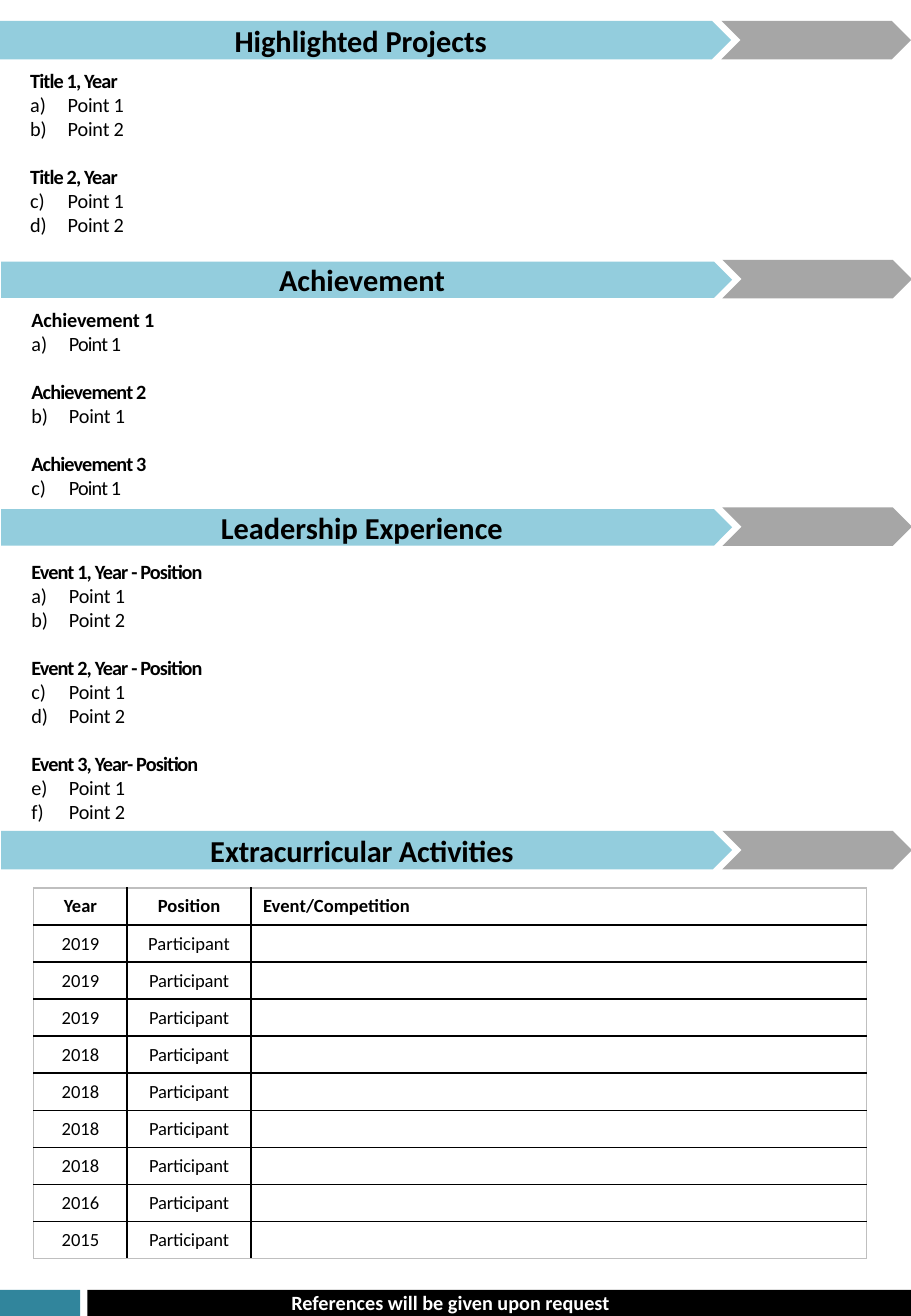
from lxml.etree import SubElement
from pptx import Presentation
from pptx.dml.color import RGBColor
from pptx.enum.shapes import MSO_SHAPE
from pptx.enum.text import MSO_ANCHOR, PP_ALIGN
from pptx.oxml.ns import qn
from pptx.util import Pt

BLACK = RGBColor(0x00, 0x00, 0x00)
WHITE = RGBColor(0xFF, 0xFF, 0xFF)
SKY = RGBColor(0x93, 0xCD, 0xDD)
TEAL = RGBColor(0x31, 0x85, 0x9C)
GREY = RGBColor(0xA6, 0xA6, 0xA6)
FRAME = RGBColor(0xBF, 0xBF, 0xBF)

TIGHT, SLIGHT, NORMAL, LOOSE = -50, -10, 0, 10
LINE = Pt(14.2)
TWO_POINTS = ["Point 1", "Point 2"]

BANNERS = [
    ([("Highlighted Projects", NORMAL)], 0, 12.4, 22.8, 12.4),
    ([("Achievement", NORMAL)], 0.6, 155, 21.6, 154),
    ([("Leadership Experience", NORMAL)], 0.6, 301.7, 21.6, 300.7),
    ([("E", LOOSE), ("xtracurricular Activities", SLIGHT)], 0.6, 492.3, 22.8, 492.3),
]
PROJECTS = [(f"Title {number}, Year", TIGHT, TWO_POINTS, SLIGHT) for number in (1, 2)]
ACHIEVEMENTS = [
    ("Achievement 1", SLIGHT, ["Point 1"], TIGHT),
    ("Achievement 2", TIGHT, ["Point 1"], SLIGHT),
    ("Achievement 3", TIGHT, ["Point 1"], TIGHT),
]
EVENTS = [
    (title, TIGHT, TWO_POINTS, SLIGHT)
    for title in ("Event 1, Year - Position", "Event 2, Year - Position", "Event 3, Year- Position")
]
HEADER = ["Year", "Position", "Event/Competition"]
YEARS = ["2019"] * 3 + ["2018"] * 4 + ["2016", "2015"]
COLUMN_WIDTHS = [55.4, 73.4, 365]


def add_run(paragraph, text, size, color=BLACK, bold=False, spacing=NORMAL):
    """Add one run of text with its font and character spacing."""
    run = paragraph.add_run()
    run.text = text
    run.font.name = "Calibri"
    run.font.size = Pt(size)
    run.font.bold = bold
    run.font.color.rgb = color
    if spacing:
        run.font._element.set("spc", str(spacing))


def add_block(slide, kind, left, top, width, height, color):
    """Add a flat filled shape without outline or shadow."""
    shape = slide.shapes.add_shape(kind, Pt(left), Pt(top), Pt(width), Pt(height))
    shape.shadow.inherit = False
    shape.fill.solid()
    shape.fill.fore_color.rgb = color
    shape.line.fill.background()
    return shape


def add_banner(slide, runs, left, top, height, chevron_top):
    """Add a section banner: a titled arrow and the grey chevron after it."""
    arrow = add_block(slide, MSO_SHAPE.PENTAGON, left, top, 433.4, height, SKY)
    arrow.text_frame.vertical_anchor = MSO_ANCHOR.MIDDLE
    paragraph = arrow.text_frame.paragraphs[0]
    paragraph.alignment = PP_ALIGN.CENTER
    for text, spacing in runs:
        add_run(paragraph, text, 18, bold=True, spacing=spacing)
    add_block(slide, MSO_SHAPE.CHEVRON, left + 427.6, chevron_top, 112.4, 22.8, GREY)


def add_text_box(slide, left, top, width, height):
    """Add a wrapping text box and return its text frame."""
    box = slide.shapes.add_textbox(Pt(left), Pt(top), Pt(width), Pt(height))
    box.text_frame.word_wrap = True
    return box.text_frame


def add_line(frame, is_first, margin, indent):
    """Start a line of an entry list at the given indent."""
    paragraph = frame.paragraphs[0] if is_first else frame.add_paragraph()
    paragraph.line_spacing = LINE
    properties = paragraph._p.get_or_add_pPr()
    properties.set("marL", str(Pt(margin)))
    properties.set("indent", str(Pt(indent)))
    return paragraph


def add_entries(slide, entries, left, top, width, height):
    """Add bold headings, each with lettered points below it."""
    frame = add_text_box(slide, left, top, width, height)
    for index, (heading, heading_spacing, points, point_spacing) in enumerate(entries):
        paragraph = add_line(frame, index == 0, 18.7, 0)
        if index:
            paragraph.space_before = LINE
        add_run(paragraph, heading, 12, bold=True, spacing=heading_spacing)
        for point in points:
            paragraph = add_line(frame, False, 41, -22.3)
            properties = paragraph._p.get_or_add_pPr()
            SubElement(properties, qn("a:buFont"), typeface="+mj-lt")
            SubElement(properties, qn("a:buAutoNum"), type="alphaLcParenR")
            add_run(paragraph, point, 12, spacing=point_spacing)


def set_borders(cell, colors):
    """Draw the left, right, top and bottom borders of a cell."""
    properties = cell._tc.get_or_add_tcPr()
    for side, color in zip("LRTB", colors):
        line = SubElement(properties, qn(f"a:ln{side}"), w=str(Pt(1)))
        fill = SubElement(line, qn("a:solidFill"))
        SubElement(fill, qn("a:srgbClr"), val=str(color))


def add_activities(slide):
    """Add the table of activities with a grey frame and black inner lines."""
    rows = [HEADER] + [[year, "Participant", ""] for year in YEARS]
    last_row, last_column = len(rows) - 1, len(HEADER) - 1
    table = slide.shapes.add_table(
        len(rows), len(HEADER), Pt(20), Pt(526.2), Pt(493.8), Pt(219.6)
    ).table
    table.first_row = table.horz_banding = False
    for column, width in zip(table.columns, COLUMN_WIDTHS):
        column.width = Pt(width)
    for row_index, texts in enumerate(rows):
        table.rows[row_index].height = Pt(21.96)
        for column_index, text in enumerate(texts):
            cell = table.cell(row_index, column_index)
            on_frame = (column_index == 0, column_index == last_column,
                        row_index == 0, row_index == last_row)
            set_borders(cell, [FRAME if outer else BLACK for outer in on_frame])
            cell.fill.background()
            cell.margin_top = cell.margin_bottom = 0
            cell.vertical_anchor = MSO_ANCHOR.MIDDLE
            paragraph = cell.text_frame.paragraphs[0]
            paragraph.font.size = Pt(11)
            if column_index < last_column:
                paragraph.alignment = PP_ALIGN.CENTER
            if text:
                spacing = SLIGHT if row_index > 1 and column_index == 1 else NORMAL
                add_run(paragraph, text, 11, bold=row_index == 0, spacing=spacing)


def add_footer(slide):
    """Add the closing bar with its teal end piece."""
    add_block(slide, MSO_SHAPE.RECTANGLE, 0, 764.3, 47.5, 15.5, TEAL)
    add_block(slide, MSO_SHAPE.RECTANGLE, 51.8, 764.3, 488.2, 15.5, BLACK)
    frame = add_text_box(slide, 165.6, 761, 318.2, 21.6)
    add_run(frame.paragraphs[0], "References will be given upon request", 12, WHITE, True)


def main():
    """Build the résumé page and save it."""
    presentation = Presentation()
    presentation.slide_width, presentation.slide_height = Pt(540), Pt(779.76)
    slide = presentation.slides.add_slide(presentation.slide_layouts[6])
    for banner in BANNERS:
        add_banner(slide, *banner)
    add_entries(slide, PROJECTS, -7.9, 37.4, 521.3, 120.2)
    add_entries(slide, ACHIEVEMENTS, -7.2, 178.6, 538.6, 120.2)
    add_entries(slide, EVENTS, -7.2, 328.3, 521.3, 162.7)
    add_activities(slide)
    add_footer(slide)
    presentation.save("out.pptx")


if __name__ == "__main__":
    main()
